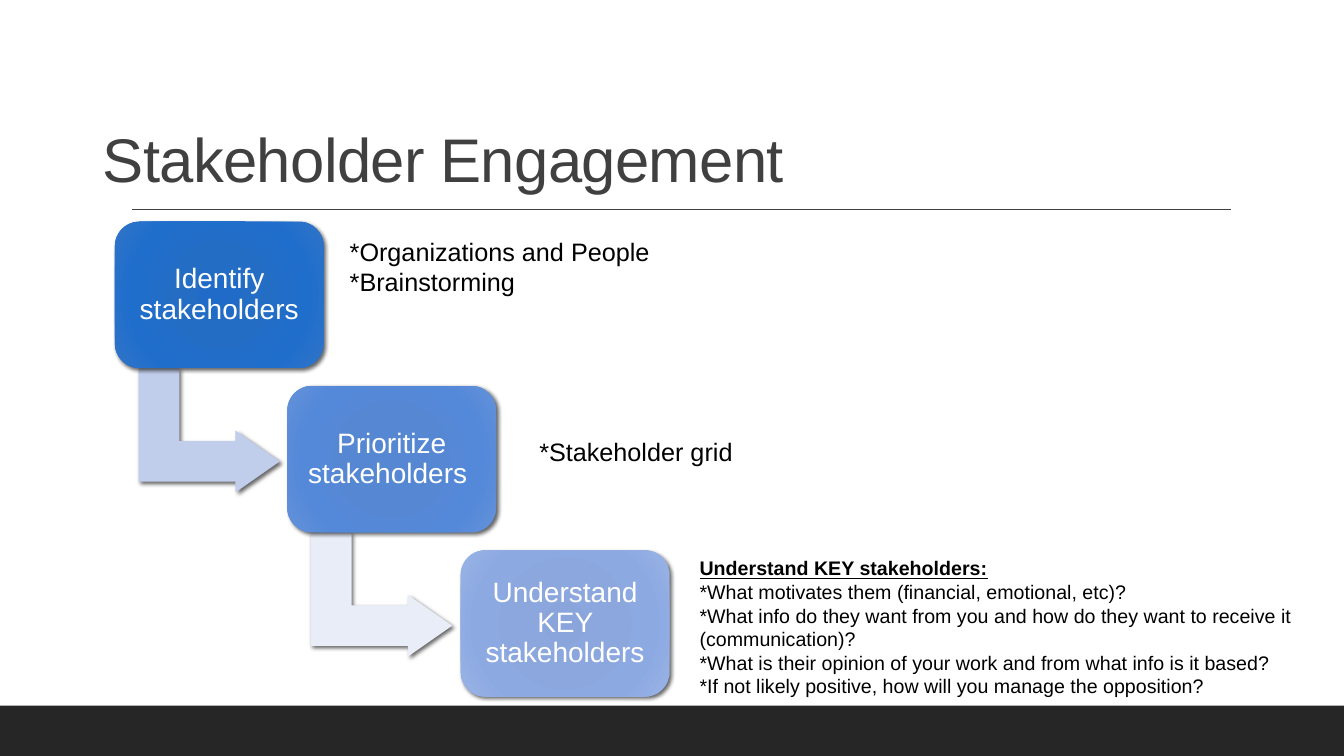
from dataclasses import dataclass

from lxml.etree import SubElement
from pptx import Presentation
from pptx.dml.color import RGBColor
from pptx.enum.shapes import MSO_CONNECTOR, MSO_SHAPE as SHAPE
from pptx.enum.text import MSO_ANCHOR as ANCHOR, MSO_AUTO_SIZE as FIT, PP_ALIGN as ALIGN
from pptx.oxml import parse_xml
from pptx.oxml.ns import nsdecls, qn
from pptx.util import Pt

PX = 9144


@dataclass(frozen=True)
class Theme:
    font: str = "Arial"
    band: str = "262626"
    heading: str = "404040"
    body: str = "000000"
    on_step: str = "FFFFFF"
    title_size: int = 44
    step_size: int = 20
    note_size: int = 18
    detail_size: int = 14
    step_fills: tuple = (
        ("1F6BC7", "236DC5", "206ECC", "3074C7"),
        ("5285D4", "5587D3", "5489D9", "6391D9"),
        ("89A5DC", "8CA7DD", "8CA9E2", "9AB3E5"),
    )
    arrow_fills: tuple = ("C0CDEB", "E9EDF7")


theme = Theme()


def write(shape, lines, size, color=theme.body, align=ALIGN.LEFT, anchor=ANCHOR.TOP,
          spacing=None, inset=(10, 5), fit=FIT.NONE, headed=False):
    frame = shape.text_frame
    frame.word_wrap = True
    frame.auto_size = fit
    frame.vertical_anchor = anchor
    frame.margin_left = frame.margin_right = inset[0] * PX
    frame.margin_top = frame.margin_bottom = inset[1] * PX
    for index, line in enumerate(lines):
        paragraph = frame.paragraphs[0] if index == 0 else frame.add_paragraph()
        paragraph.alignment = align
        paragraph.line_spacing = spacing
        run = paragraph.add_run()
        run.text = line
        font = run.font
        font.name, font.size = theme.font, Pt(size)
        font.color.rgb = RGBColor.from_string(color)
        if headed and index == 0:
            font.bold = font.underline = True


def add_figure(kind, box, color, shadowed=True):
    figure = slide.shapes.add_shape(kind, *(value * PX for value in box))
    figure.fill.solid()
    figure.fill.fore_color.rgb = RGBColor.from_string(color)
    figure.line.fill.background()
    figure.shadow.inherit = False
    if shadowed:
        effects = figure._element.spPr.find(qn("a:effectLst"))
        shadow = SubElement(effects, qn("a:outerShdw"), blurRad=str(Pt(3)),
                            dist=str(Pt(2)), dir="2700000", algn="ctr", rotWithShape="0")
        black = SubElement(shadow, qn("a:srgbClr"), val="000000")
        SubElement(black, qn("a:alpha"), val="60000")
    return figure


deck = Presentation()
deck.slide_width, deck.slide_height = 1333 * PX, 750 * PX
slide = deck.slides.add_slide(deck.slide_layouts[5])

add_figure(SHAPE.RECTANGLE, (0, 700, 1333, 50), theme.band, shadowed=False)

rule = slide.shapes.add_connector(
    MSO_CONNECTOR.STRAIGHT, 131 * PX, 208 * PX, 1221 * PX, 208 * PX)
rule.line.color.rgb = RGBColor.from_string(theme.heading)
rule.line.width = Pt(1)
SubElement(rule._element.spPr, qn("a:effectLst"))

title = slide.shapes.title
title.left, title.top, title.width, title.height = 92 * PX, 111 * PX, 1100 * PX, 88 * PX
write(title, ["Stakeholder Engagement"], theme.title_size, theme.heading,
      anchor=ANCHOR.BOTTOM, spacing=0.9)
title.text_frame.paragraphs[0].runs[0].font._element.set("spc", "-50")

steps = ["Identify stakeholders", "Prioritize stakeholders ", "Understand KEY stakeholders"]
for index, step in enumerate(steps):
    across, down = index * 343 // 2, index * 163
    if index < len(theme.arrow_fills):
        arrow = add_figure(SHAPE.BENT_UP_ARROW, (146 + across, 357 + down, 123, 140),
                           theme.arrow_fills[index])
        arrow.rotation = 90
        for position, value in enumerate((0.328, 0.25, 0.358)):
            arrow.adjustments[position] = value

    tones = theme.step_fills[index]
    card = add_figure(SHAPE.ROUNDED_RECTANGLE, (114 + across, 220 + down, 207, 145), tones[0])
    stops = "".join(f'<a:gs pos="{place}000"><a:srgbClr val="{tone}"/></a:gs>'
                    for place, tone in zip((0, 34, 70, 100), tones))
    gradient = parse_xml(
        f'<a:gradFill {nsdecls("a")} rotWithShape="1"><a:gsLst>{stops}</a:gsLst>'
        '<a:path path="circle"><a:fillToRect l="100000" t="100000" r="100000" b="100000"/>'
        '</a:path></a:gradFill>')
    properties = card._element.spPr
    properties.replace(properties.find(qn("a:solidFill")), gradient)
    write(card, [step], theme.step_size, theme.on_step, align=ALIGN.CENTER,
          anchor=ANCHOR.MIDDLE, spacing=0.9, inset=(8, 8))

notes = [
    ((337, 229, 459, 71), theme.note_size, False,
     ["*Organizations and People", "*Brainstorming"]),
    ((525, 428, 459, 40), theme.note_size, False, ["*Stakeholder grid"]),
    ((684, 547, 636, 151), theme.detail_size, True,
     ["Understand KEY stakeholders:",
      "*What motivates them (financial, emotional, etc)?",
      "*What info do they want from you and how do they want to receive it (communication)?",
      "*What is their opinion of your work and from what info is it based?",
      "*If not likely positive, how will you manage the opposition?"]),
]
for box, size, headed, lines in notes:
    note = slide.shapes.add_textbox(*(value * PX for value in box))
    write(note, lines, size, fit=FIT.SHAPE_TO_FIT_TEXT, headed=headed)

deck.save("out.pptx")
